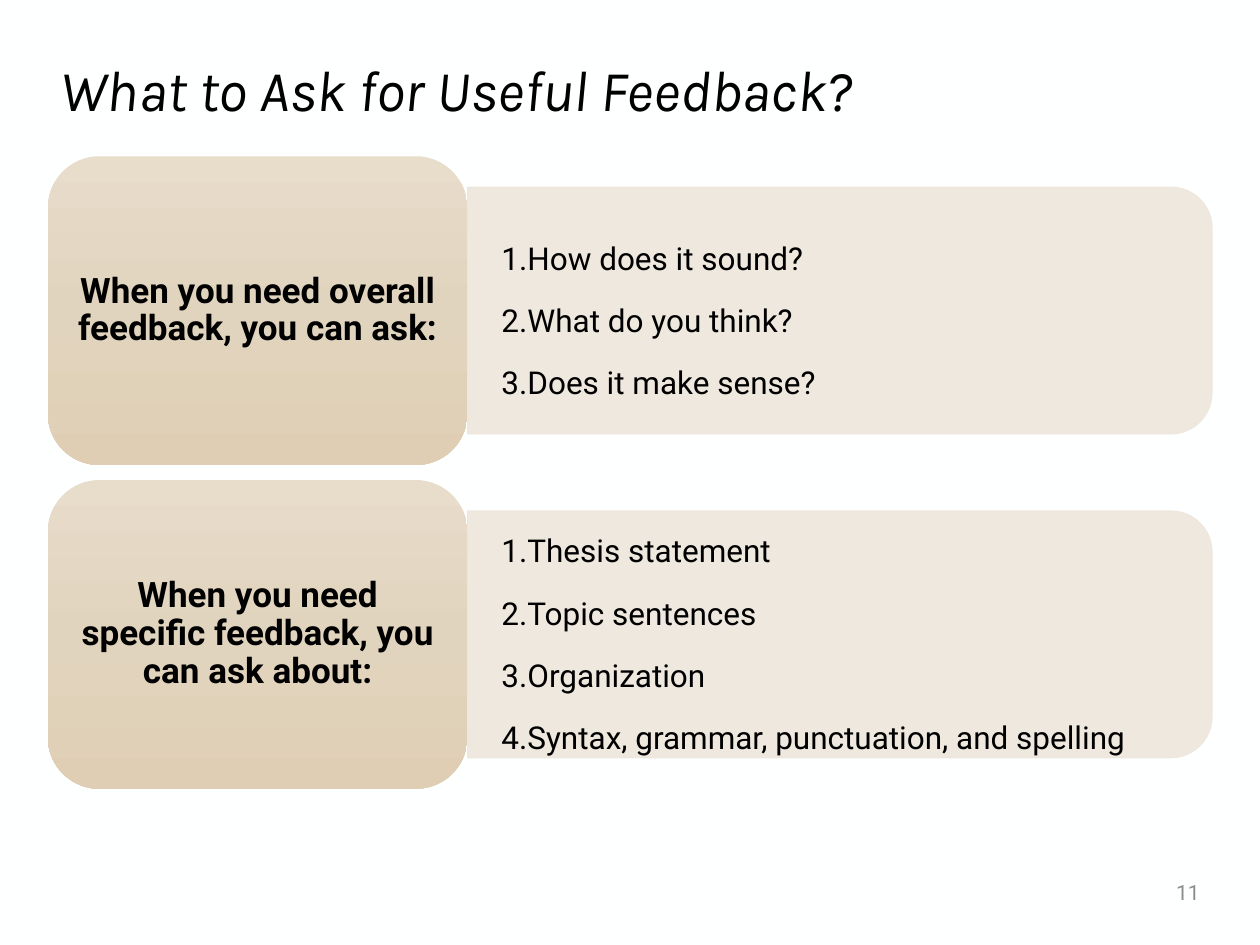
from copy import deepcopy

from pptx import Presentation
from pptx import util as u
from pptx.dml.color import RGBColor
from pptx.enum import shapes, text
from pptx.oxml.ns import qn
from lxml import etree

COLORS = {
    "page": "FEFFFF",
    "ink": "000000",
    "number": "8C8C8C",
    "panel": "EDE6DC",
    "card_top": "E8DCCA",
    "card_middle": "E1D4BE",
    "card_bottom": "DFCEB4",
}
SECTIONS = [
    ("When you need overall feedback, you can ask:",
     ["How does it sound?", "What do you think?", "Does it make sense?"]),
    ("When you need specific feedback, you can ask about:",
     ["Thesis statement", "Topic sentences", "Organization",
      "Syntax, grammar, punctuation, and spelling"]),
]
LEFT, TOP, CARD_WIDTH, CARD_HEIGHT, PITCH = 0.38, 1.24, 3.33, 2.45, 2.57
PANEL_WIDTH, PANEL_HEIGHT = 5.91, 1.96


def color(name):
    return RGBColor.from_string(COLORS[name])


def set_opacity(solid_fill, percent):
    rgb = solid_fill.find(qn("a:srgbClr"))
    etree.SubElement(rgb, qn("a:alpha")).set("val", str(percent * 1000))


class Page:
    """Holds the current slide and the style of its elements."""

    body_font = "Roboto"
    title_font = "Karla"

    def __init__(self, deck):
        self.slide = deck.slides.add_slide(deck.slide_layouts[5])
        background = self.slide.background.fill
        background.solid()
        background.fore_color.rgb = color("page")

    def add_span(self, para, words, size, ink="ink", font=None, bold=False, italic=False):
        span = para.add_run()
        span.text = words
        span.font.name = font or self.body_font
        span.font.size = u.Pt(size)
        span.font.bold = bold
        span.font.italic = italic
        span.font.color.rgb = color(ink)

    def title(self, words):
        box = self.slide.shapes.title
        box.left, box.top = u.Inches(LEFT), u.Inches(0.42)
        box.width, box.height = u.Inches(9.24), u.Inches(0.64)
        frame = box.text_frame
        frame.vertical_anchor = text.MSO_ANCHOR.MIDDLE
        para = frame.paragraphs[0]
        para.alignment = text.PP_ALIGN.LEFT
        para.line_spacing = 0.9
        self.add_span(para, words, 33, font=self.title_font, italic=True)

    def text_box(self, left, top, width, height, inset_x=0.1, inset_y=0.05):
        box = self.slide.shapes.add_textbox(*map(u.Inches, (left, top, width, height)))
        frame = box.text_frame
        frame.word_wrap = True
        frame.vertical_anchor = text.MSO_ANCHOR.MIDDLE
        frame.margin_left = frame.margin_right = u.Inches(inset_x)
        frame.margin_top = frame.margin_bottom = u.Inches(inset_y)
        return frame

    def shape(self, kind, left, top, width, height):
        shape = self.slide.shapes.add_shape(
            kind, *map(u.Inches, (left, top, width, height)))
        shape.shadow.inherit = False
        return shape

    def panel(self, left, top):
        """Draw the wide panel, an upright shape turned to round its right side."""
        shift = (PANEL_WIDTH - PANEL_HEIGHT) / 2
        shape = self.shape(shapes.MSO_SHAPE.ROUND_2_SAME_RECTANGLE,
                           left + shift, top - shift, PANEL_HEIGHT, PANEL_WIDTH)
        shape.rotation = 90
        shape.line.width = u.Pt(0.5)
        for fill in (shape.fill, shape.line.fill):
            fill.solid()
            fill.fore_color.rgb = color("panel")
        for solid_fill in shape._element.spPr.iter(qn("a:solidFill")):
            set_opacity(solid_fill, 90)

    def numbered_list(self, left, top, items):
        frame = self.text_box(left, top, 5.82, 1.77, 0.27, 0.14)
        for index, item in enumerate(items):
            para = frame.add_paragraph() if index else frame.paragraphs[0]
            para.line_spacing = 1.5
            para.space_after = u.Pt(3.2)
            props = para._p.get_or_add_pPr()
            props.set("marL", str(u.Inches(0.19)))
            props.set("indent", str(u.Inches(-0.19)))
            etree.SubElement(props, qn("a:buFont")).set("typeface", "+mj-lt")
            etree.SubElement(props, qn("a:buAutoNum")).set("type", "arabicPeriod")
            para.font.name = self.body_font
            self.add_span(para, item, 18)

    def card(self, left, top, words):
        shape = self.shape(shapes.MSO_SHAPE.ROUNDED_RECTANGLE,
                           left, top, CARD_WIDTH, CARD_HEIGHT)
        shape.line.fill.background()
        shape.fill.gradient()
        shape.fill.gradient_angle = 270
        first = shape._element.spPr.find(".//" + qn("a:gs"))
        first.addnext(deepcopy(first))
        names = ("card_top", "card_middle", "card_bottom")
        for index, (stop, name) in enumerate(zip(shape.fill.gradient_stops, names)):
            stop.position = index / 2
            stop.color.rgb = color(name)
        margin = 0.12
        frame = self.text_box(left + margin, top + margin, CARD_WIDTH - 2 * margin,
                              CARD_HEIGHT - 2 * margin, 0.08, 0.04)
        para = frame.paragraphs[0]
        para.alignment = text.PP_ALIGN.CENTER
        para.line_spacing = 0.9
        self.add_span(para, words, 20, bold=True)

    def page_number(self, number):
        para = self.text_box(8.42, 6.88, 1.2, 0.4).paragraphs[0]
        para.alignment = text.PP_ALIGN.RIGHT
        self.add_span(para, number, 12, ink="number")


def main():
    deck = Presentation()
    deck.slide_width, deck.slide_height = u.Inches(10), u.Inches(7.5)
    page = Page(deck)
    page.title("What to Ask for Useful Feedback?")
    page.page_number("11")
    panel_left = LEFT + CARD_WIDTH
    for index, (heading, items) in enumerate(SECTIONS):
        top = TOP + index * PITCH
        page.panel(panel_left, top + (CARD_HEIGHT - PANEL_HEIGHT) / 2)
        page.numbered_list(panel_left, top + 0.34, items)
        page.card(LEFT, top, heading)
    deck.save("out.pptx")


if __name__ == "__main__":
    main()
